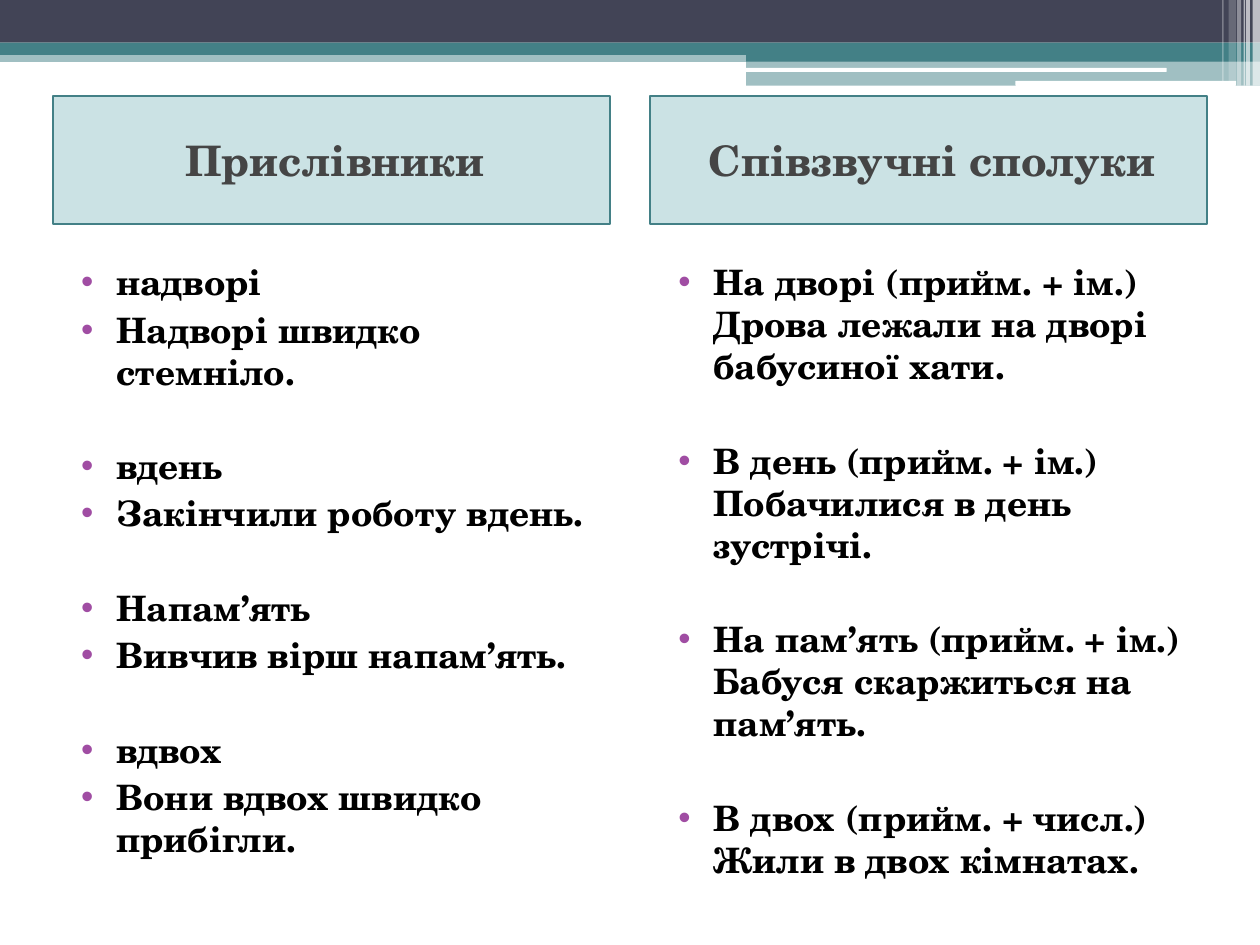
from lxml.etree import SubElement
from pptx import Presentation
from pptx.dml.color import RGBColor
from pptx.enum.shapes import MSO_SHAPE
from pptx.enum.text import MSO_ANCHOR, MSO_AUTO_SIZE, PP_ALIGN
from pptx.oxml.ns import qn
from pptx.util import Cm, Pt

NAVY = RGBColor(0x42, 0x44, 0x56)
TEAL = RGBColor(0x43, 0x80, 0x86)
HEADING_TEAL = RGBColor(0x32, 0x8E, 0x97)
WHITE = RGBColor(0xFF, 0xFF, 0xFF)
BLACK = RGBColor(0x00, 0x00, 0x00)
GREY = RGBColor(0x45, 0x45, 0x45)
PURPLE = RGBColor(0xA0, 0x4D, 0xA3)

PAGE_WIDTH, PAGE_HEIGHT = 25.4, 19.05
COLUMN_WIDTH = 11.23
HALF_LEFT = 15.04
HALF_WIDTH = PAGE_WIDTH - HALF_LEFT

# left, top, width, height, colour, opacity in percent
BANDS = [
    (0, 1.02, PAGE_WIDTH, 0.23, TEAL, 50),
    (0, 0, PAGE_WIDTH, 0.86, NAVY, 100),
    (0, 0.86, PAGE_WIDTH, 0.25, TEAL, 100),
    (HALF_LEFT, 0.99, HALF_WIDTH, 0.25, TEAL, 100),
    (HALF_LEFT, 1.22, HALF_WIDTH, 0.51, TEAL, 50),
]
# left, top, width, height
WHITE_BARS = [(15.01, 1.37, 8.51, 0.08), (20.47, 1.63, 4.45, 0.1)]
# left, width, height, opacity in percent
STRIPES = [
    (25.25, 0.15, 1.73, 65),
    (25.12, 0.08, 1.73, 65),
    (25.07, 0.03, 1.73, 60),
    (24.94, 0.08, 1.73, 40),
    (24.77, 0.15, 1.63, 20),
    (24.64, 0.03, 1.63, 30),
]
# left, heading placeholder, list placeholder, heading, groups of list items
COLUMNS = [
    (1.07, 1, 2, "Прислівники", [
        ["надворі", "Надворі швидко стемніло."],
        ["вдень", "Закінчили роботу вдень."],
        ["Напам’ять", "Вивчив вірш напам’ять."],
        ["вдвох", "Вони вдвох швидко прибігли."],
    ]),
    (13.11, 3, 4, "Співзвучні сполуки", [
        ["На дворі (прийм. + ім.) Дрова лежали на дворі бабусиної хати."],
        ["В день (прийм. + ім.) Побачилися в день зустрічі."],
        ["На пам’ять (прийм. + ім.) Бабуся скаржиться на пам’ять."],
        ["В двох (прийм. + числ.) Жили в двох кімнатах."],
    ]),
]


def write(para, text, size=20, color=BLACK, align=PP_ALIGN.LEFT, before=3,
          margin=1.02, indent=-0.71, bullet=None):
    """Fill a paragraph; margin and indent are in centimetres."""
    para.alignment = align
    para.space_before = Pt(before)
    span = para.add_run()
    span.text = text
    span.font.name = "TeX Gyre Schola"
    span.font.size = Pt(size)
    span.font.bold = True
    span.font.color.rgb = color
    properties = para._p.get_or_add_pPr()
    properties.set("marL", str(Cm(margin)))
    properties.set("indent", str(Cm(indent)))
    if bullet is not None:
        bullet_color = SubElement(properties, qn("a:buClr"))
        SubElement(bullet_color, qn("a:srgbClr"), val=str(bullet))
        SubElement(properties, qn("a:buFont"), typeface="Arial")
        SubElement(properties, qn("a:buChar"), char="•")


def paint(shape, color, opacity=100):
    shape.fill.solid()
    shape.fill.fore_color.rgb = color
    if opacity < 100:
        value = shape.element.spPr.find(qn("a:solidFill")).find(qn("a:srgbClr"))
        SubElement(value, qn("a:alpha"), val=str(opacity * 1000))


class ComparisonPage:
    """Holds the current slide and draws its elements; lengths in centimetres."""

    def __init__(self, deck):
        self.page = deck.slides.add_slide(deck.slide_layouts[4])
        title = self.page.shapes.title.element
        title.getparent().remove(title)

    def band(self, left, top, width, height, color, opacity=100,
             kind=MSO_SHAPE.RECTANGLE):
        shape = self.page.shapes.add_shape(
            kind, Cm(left), Cm(top), Cm(width), Cm(height))
        shape.shadow.inherit = False
        shape.line.fill.background()
        paint(shape, color, opacity)

    def placeholder(self, index, left, top, height, anchor):
        box = self.page.placeholders[index]
        box.left, box.top = Cm(left), Cm(top)
        box.width, box.height = Cm(COLUMN_WIDTH), Cm(height)
        box.text_frame.word_wrap = True
        box.text_frame.auto_size = MSO_AUTO_SIZE.NONE
        box.text_frame.vertical_anchor = anchor
        return box

    def heading(self, index, left, text):
        box = self.placeholder(index, left, 1.93, 2.59, MSO_ANCHOR.MIDDLE)
        paint(box, HEADING_TEAL, 25)
        box.line.color.rgb = TEAL
        box.line.width = Pt(1)
        write(box.text_frame.paragraphs[0], text, size=24, color=GREY,
              align=PP_ALIGN.CENTER, margin=0.13, indent=0)

    def bullets(self, index, left, groups):
        """Write the groups as one list, with a wide gap between groups."""
        box = self.placeholder(index, left, 5.13, 13.18, MSO_ANCHOR.TOP)
        frame = box.text_frame
        for group_number, group in enumerate(groups):
            for item_number, text in enumerate(group):
                starts_group = item_number == 0
                first = starts_group and group_number == 0
                para = frame.paragraphs[0] if first else frame.add_paragraph()
                before = 30 if starts_group and not first else 3
                write(para, text, before=before, bullet=PURPLE)


def main():
    deck = Presentation()
    deck.slide_width, deck.slide_height = Cm(PAGE_WIDTH), Cm(PAGE_HEIGHT)
    comparison = ComparisonPage(deck)
    for band in BANDS:
        comparison.band(*band)
    for bar in WHITE_BARS:
        comparison.band(*bar, WHITE, kind=MSO_SHAPE.ROUNDED_RECTANGLE)
    for left, width, height, opacity in STRIPES:
        comparison.band(left, 0, width, height, WHITE, opacity)
    for left, heading_index, list_index, heading, groups in COLUMNS:
        comparison.heading(heading_index, left, heading)
        comparison.bullets(list_index, left, groups)
    deck.save("out.pptx")


if __name__ == "__main__":
    main()
